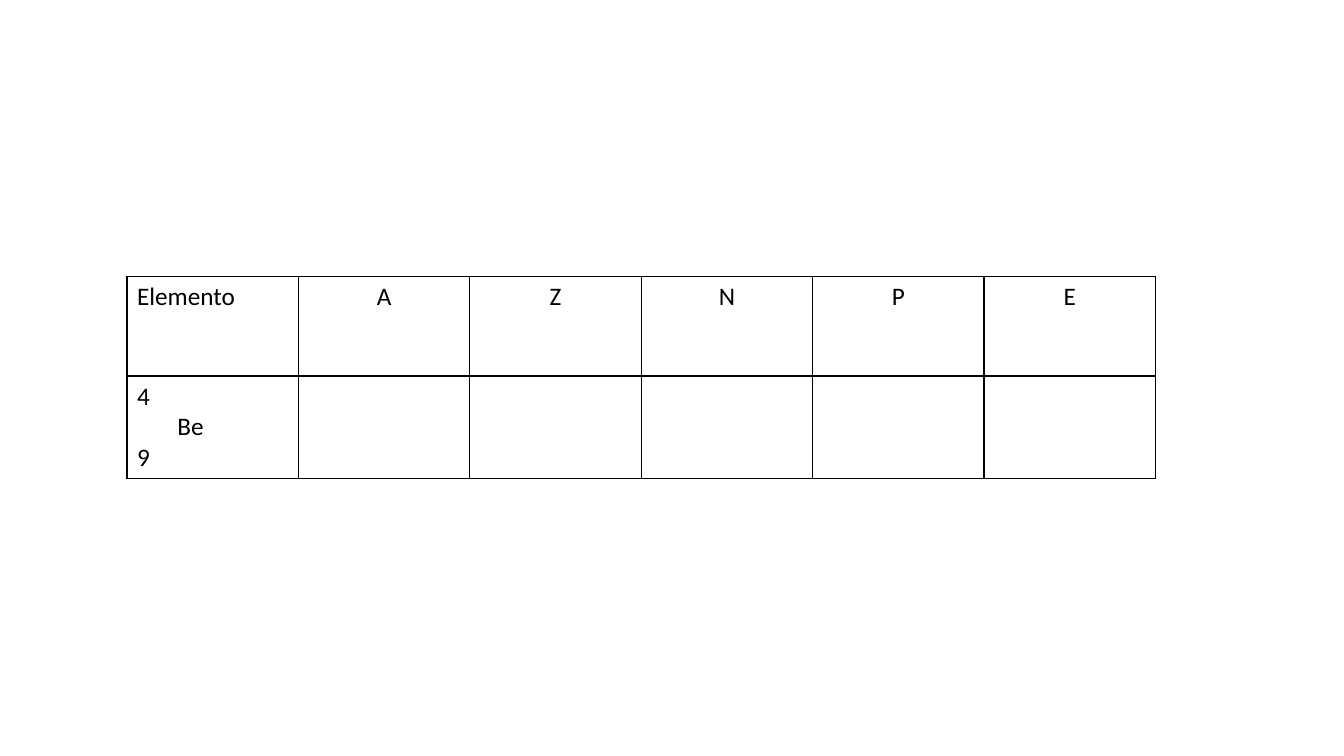
import pptx
import pptx.util
import pptx.dml.color
import pptx.enum.text
import pptx.oxml
from pptx.util import Inches, Pt

HEADERS = ["Elemento", "A", "Z", "N", "P", "E"]
# Lines of the element cell: text and left indent in inches
BERYLLIUM = [("4", 0), ("Be", 0.4), ("9", 0)]

LEFT, TOP = 1.26, 2.74
COL_W, ROW_H = 1.7, 0.99
FONT, SIZE = "Calibri", 18
BLACK = pptx.dml.color.RGBColor(0, 0, 0)
ALIGN = pptx.enum.text.PP_ALIGN


def write(p, text, align=ALIGN.LEFT, indent=0):
    p.alignment = align
    if indent:
        p._p.get_or_add_pPr().set("marL", str(Inches(indent)))
    r = p.add_run()
    r.text = text
    r.font.name, r.font.size = FONT, Pt(SIZE)
    r.font.color.rgb = BLACK


def style_cell(cell):
    """Clear the fill and draw a thin black line on all four sides."""
    cell.fill.background()
    tcPr = cell._tc.get_or_add_tcPr()
    for i, side in enumerate(("lnL", "lnR", "lnT", "lnB")):
        tcPr.insert(i, pptx.oxml.parse_xml(
            f'<a:{side} xmlns:a="http://schemas.openxmlformats.org/drawingml/2006/main"'
            f' w="{Pt(1)}"><a:solidFill><a:srgbClr val="{BLACK}"/></a:solidFill></a:{side}>'))


def main():
    prs = pptx.Presentation()
    prs.slide_width, prs.slide_height = Inches(13.33), Inches(7.5)
    s = prs.slides.add_slide(prs.slide_layouts[6])

    table = s.shapes.add_table(2, len(HEADERS), Inches(LEFT), Inches(TOP),
                               Inches(COL_W * len(HEADERS)), Inches(ROW_H * 2)).table
    table.first_row = table.horz_banding = False
    for col in table.columns:
        col.width = Inches(COL_W)
    for cell in table.iter_cells():
        style_cell(cell)

    for c, text in enumerate(HEADERS):
        write(table.cell(0, c).text_frame.paragraphs[0], text,
              align=ALIGN.CENTER if c else ALIGN.LEFT)

    tf = table.cell(1, 0).text_frame
    for i, (text, indent) in enumerate(BERYLLIUM):
        p = tf.add_paragraph() if i else tf.paragraphs[0]
        write(p, text, indent=indent)

    prs.save("out.pptx")


if __name__ == "__main__":
    main()
